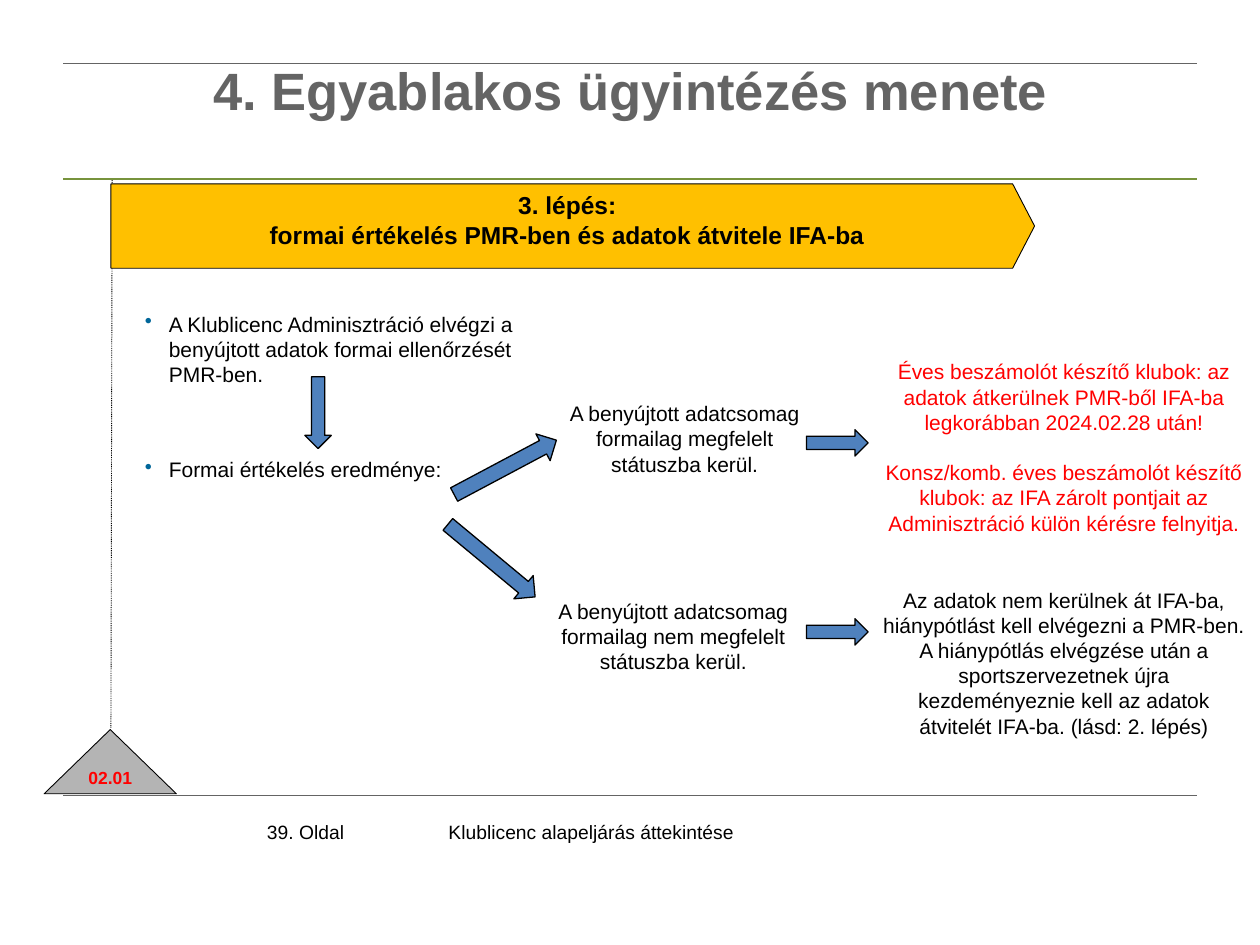
from lxml.etree import SubElement
from pptx import Presentation
from pptx.dml.color import RGBColor
from pptx.enum.dml import MSO_LINE
from pptx.enum.shapes import MSO_CONNECTOR, MSO_SHAPE
from pptx.enum.text import MSO_ANCHOR, PP_ALIGN
from pptx.oxml.ns import qn
from pptx.util import Pt

THEME = {
    "font": "Arial",
    "black": "000000", "grey": "646464", "red": "FF0000", "green": "77933C",
    "banner": "FFC000", "triangle": "B4B4B4", "arrow": "4F81BD", "bullet": "006699",
    "title_size": 30, "banner_size": 14, "body_size": 12, "footer_size": 11, "date_size": 10,
}

# Content: boxes are left, top, width, height in points
TITLE = "4. Egyablakos ügyintézés menete"
STEP = ["3. lépés:", "formai értékelés PMR-ben és adatok átvitele IFA-ba"]
DATE = "02.01"
BULLETS = [
    "A Klublicenc Adminisztráció elvégzi a benyújtott adatok formai ellenőrzését PMR-ben.",
    "Formai értékelés eredménye:",
]
FOOTERS = [
    ("39. Oldal", (152.6, 468.7, 52.6, 15.8)),
    ("Klublicenc alapeljárás áttekintése", (256.3, 468.7, 247, 15.8)),
]
OUTCOMES = [  # paragraphs, box, colour, gap between paragraphs
    (["A benyújtott adatcsomag formailag megfelelt státuszba kerül."],
     (317.5, 225.4, 147.6, 51.1), "black", 0),
    (["A benyújtott adatcsomag formailag nem megfelelt státuszba kerül."],
     (311, 338.4, 147.6, 51.1), "black", 0),
    (["Éves beszámolót készítő klubok: az adatok átkerülnek PMR-ből IFA-ba "
      "legkorábban 2024.02.28 után!",
      "Konsz/komb. éves beszámolót készítő klubok: az IFA zárolt pontjait az "
      "Adminisztráció külön kérésre felnyitja."],
     (496.1, 201.6, 223.9, 108.7), "red", 14.4),
    (["Az adatok nem kerülnek át IFA-ba,",
      "hiánypótlást kell elvégezni a PMR-ben. A hiánypótlás elvégzése után a "
      "sportszervezetnek újra kezdeményeznie kell az adatok átvitelét IFA-ba. (lásd: 2. lépés)"],
     (496.1, 331.9, 223.9, 94.3), "black", 0),
]
ARROWS = [  # unrotated box, rotation
    ((174.2, 215.3, 15.1, 41), 180),
    ((280.1, 234, 17.3, 66.2), 62),
    ((272.2, 288, 17.3, 64.8), 129.7),
    ((470.9, 235.4, 15.1, 35.3), 90),
    ((470.9, 343.4, 15.1, 35.3), 90),
]
RULES = [(36, "grey", 0.5), (102.2, "green", 1), (454.3, "grey", 0.25)]


def color(name):
    return RGBColor.from_string(THEME[name])


def add_bullet(p):
    pPr = p._p.get_or_add_pPr()
    pPr.set("marL", str(Pt(13.7)))
    pPr.set("indent", str(-Pt(13.7)))
    SubElement(SubElement(pPr, qn("a:buClr")), qn("a:srgbClr"), val=THEME["bullet"])
    SubElement(pPr, qn("a:buChar"), char="•")


def write(sp, paragraphs, size="body_size", ink="black", bold=False, align=PP_ALIGN.LEFT,
          insets=(0, 0, 0, 0), anchor=MSO_ANCHOR.TOP, wrap=True, gap=0, spacing=None,
          bullets=False):
    tf = sp.text_frame
    tf.word_wrap = wrap
    tf.vertical_anchor = anchor
    tf.margin_left, tf.margin_top, tf.margin_right, tf.margin_bottom = map(Pt, insets)
    for i, text in enumerate(paragraphs):
        p = tf.paragraphs[0] if i == 0 else tf.add_paragraph()
        p.alignment = align
        if spacing:
            p.line_spacing = spacing
        if i and gap:
            p.space_before = Pt(gap)
        if bullets:
            add_bullet(p)
        r = p.add_run()
        r.text = text
        r.font.name = THEME["font"]
        r.font.size = Pt(THEME[size])
        r.font.bold = bold
        r.font.color.rgb = color(ink)


def add_text(s, box, paragraphs, **fmt):
    write(s.shapes.add_textbox(*map(Pt, box)), paragraphs, **fmt)


def add_shape(s, kind, box, fill, width=0.5, rotation=0):
    sp = s.shapes.add_shape(kind, *map(Pt, box))
    sp.shadow.inherit = False
    sp.fill.solid()
    sp.fill.fore_color.rgb = color(fill)
    sp.line.color.rgb = color("black")
    sp.line.width = Pt(width)
    sp.rotation = rotation
    return sp


def add_line(s, ends, ink, width, dash=None):
    c = s.shapes.add_connector(MSO_CONNECTOR.STRAIGHT, *map(Pt, ends))
    c.line.color.rgb = color(ink)
    c.line.width = Pt(width)
    if dash:
        c.line.dash_style = dash
    SubElement(c._element.spPr, qn("a:effectLst"))


def main():
    prs = Presentation()
    prs.slide_width, prs.slide_height = Pt(720), Pt(540)
    s = prs.slides.add_slide(prs.slide_layouts[6])

    # Footer, rules and title
    for text, box in FOOTERS:
        add_text(s, box, [text], size="footer_size", wrap=False)
    for y, ink, width in RULES:
        add_line(s, (36, y, 684, y), ink, width)
    add_text(s, (36, 36, 648.7, 67.7), [TITLE], size="title_size", ink="grey", bold=True,
             align=PP_ALIGN.CENTER, insets=(0, 2.9, 0, 0), spacing=0.85)

    # Date marker and step banner
    inset = (3.6,) * 4
    sp = add_shape(s, MSO_SHAPE.ISOSCELES_TRIANGLE, (25.2, 416.9, 75.6, 36.7), "triangle")
    write(sp, [DATE], size="date_size", ink="red", bold=True, align=PP_ALIGN.CENTER,
          insets=inset, anchor=MSO_ANCHOR.MIDDLE, wrap=False)
    add_line(s, (64.1, 103, 63.4, 416.2), "black", 0.5, MSO_LINE.ROUND_DOT)
    sp = add_shape(s, MSO_SHAPE.PENTAGON, (63.4, 105.1, 527.8, 48.2), "banner")
    sp.adjustments[0] = 0.26
    write(sp, STEP, size="banner_size", bold=True, align=PP_ALIGN.CENTER,
          insets=inset, wrap=False)

    # Flow: checks, outcomes and arrows
    add_text(s, (82.8, 177.8, 240.5, 177.8), BULLETS, gap=40, bullets=True)
    for paragraphs, box, ink, gap in OUTCOMES:
        add_text(s, box, paragraphs, ink=ink, gap=gap, align=PP_ALIGN.CENTER,
                 insets=(7.2, 3.6, 7.2, 3.6))
    for box, rotation in ARROWS:
        add_shape(s, MSO_SHAPE.UP_ARROW, box, "arrow", 0.75, rotation)

    prs.save("out.pptx")


if __name__ == "__main__":
    main()
